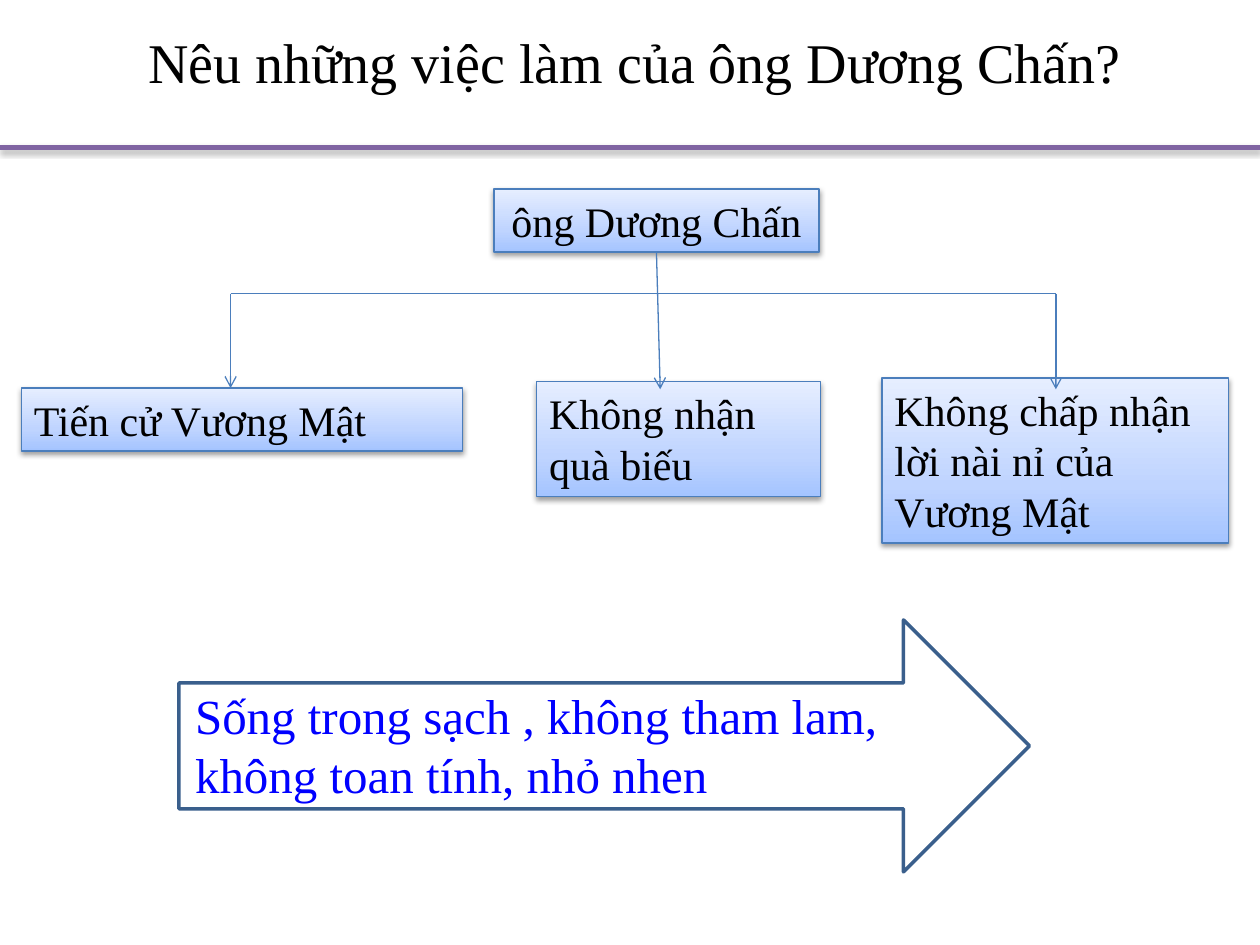
"""Build a slide on the deeds of Dương Chấn."""
from copy import deepcopy

from lxml import etree
from pptx import Presentation
from pptx import util as u
from pptx.dml.color import RGBColor
from pptx.enum import shapes, text
from pptx.oxml.ns import qn


def write(shape, words, size, color="000000", align="LEFT"):
    frame = shape.text_frame
    frame.word_wrap = True
    frame.auto_size = text.MSO_AUTO_SIZE.NONE
    frame.vertical_anchor = text.MSO_ANCHOR.TOP
    para = frame.paragraphs[0]
    para.alignment = text.PP_ALIGN[align]
    run = para.add_run()
    run.text = words
    run.font.size = u.Pt(size)
    run.font.name = "Times New Roman"
    run.font.color.rgb = RGBColor.from_string(color)


def style(shape, color, width, drop=0, alpha=0):
    shape.line.color.rgb = RGBColor.from_string(color)
    shape.line.width = u.Pt(width)
    props = shape._element.spPr
    for old in props.findall(qn("a:effectLst")):
        props.remove(old)
    effect = etree.SubElement(props, qn("a:effectLst"))
    if drop:
        shade = etree.SubElement(
            effect, qn("a:outerShdw"), blurRad=str(u.Pt(3.1)),
            dist=str(u.Pt(drop)), dir="5400000", rotWithShape="0")
        black = etree.SubElement(shade, qn("a:srgbClr"), val="000000")
        etree.SubElement(black, qn("a:alpha"), val=str(alpha * 1000))


deck = Presentation()
deck.slide_width, deck.slide_height = u.Inches(10), u.Inches(7.5)
slide = deck.slides.add_slide(deck.slide_layouts[5])
parts = slide.shapes

title = parts.title
title.left, title.top = u.Inches(0), u.Inches(0.17)
title.width, title.height = u.Inches(10.08), u.Inches(0.64)
write(title, "Nêu những việc làm của ông Dương Chấn?", 32, align="CENTER")

rule = parts.add_connector(
    shapes.MSO_CONNECTOR.STRAIGHT, 0, u.Inches(1.17), u.Inches(10), u.Inches(1.17))
style(rule, "8064A2", 3, 1.8, 35)

boxes = [
    (3.92, 1.5, 2.58, 0.5, "ông Dương Chấn", "CENTER"),
    (0.17, 3.08, 3.5, 0.5, "Tiến cử Vương Mật", "LEFT"),
    (4.26, 3.03, 2.25, 0.91, "Không nhận quà biếu", "LEFT"),
    (7, 3, 2.75, 1.31, "Không chấp nhận lời nài nỉ của Vương Mật", "LEFT"),
]
shades = [(0, "A4C4FF"), (0.35, "BFD4FF"), (1, "E6EEFF")]
for *place, words, align in boxes:
    box = parts.add_shape(shapes.MSO_SHAPE.RECTANGLE, *map(u.Inches, place))
    box.fill.gradient()
    box.fill.gradient_angle = 90
    stops = box._element.spPr.find(".//" + qn("a:gsLst"))
    stops.append(deepcopy(stops[0]))
    for stop, (spot, color) in zip(box.fill.gradient_stops, shades):
        stop.position = spot
        stop.color.rgb = RGBColor.from_string(color)
    style(box, "4B7EBC", 0.75, 1.6, 38)
    write(box, words, 24, align=align)

links = [
    (1.83, 2.33, 8.38, 2.33, False),
    (8.38, 2.33, 8.38, 3.09, True),
    (5.21, 2, 5.24, 3.09, True),
    (1.83, 2.33, 1.83, 3.08, True),
]
for *ends, tip in links:
    link = parts.add_connector(shapes.MSO_CONNECTOR.STRAIGHT, *map(u.Inches, ends))
    style(link, "4B7EBC", 0.75)
    if tip:
        etree.SubElement(link._element.spPr.find(qn("a:ln")), qn("a:tailEnd"), type="arrow")

arrow = parts.add_shape(
    shapes.MSO_SHAPE.RIGHT_ARROW, *map(u.Inches, (1.42, 4.92, 6.75, 2)))
arrow.fill.background()
style(arrow, "3A5F8C", 2)

moral = parts.add_textbox(*map(u.Inches, (1.45, 5.39, 6.47, 1.04)))
write(moral, "Sống trong sạch , không tham lam, không toan tính, nhỏ nhen", 28, "0000FF")

deck.save("out.pptx")
